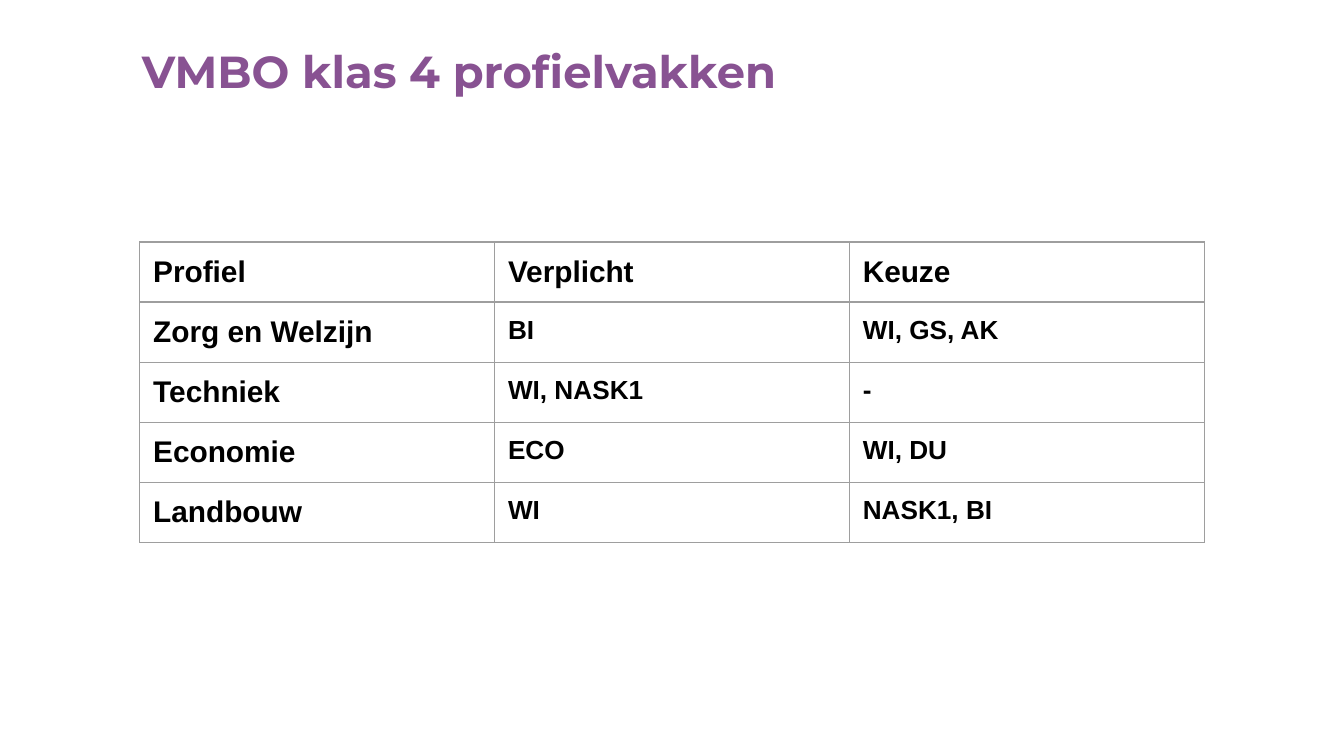
from lxml import etree
from pptx import Presentation
from pptx.dml.color import RGBColor
from pptx.enum.text import MSO_ANCHOR, PP_ALIGN
from pptx.oxml.ns import qn
from pptx.util import Pt

PX = 4572  # 200 px to the inch
INSET = 20 * PX
COLUMN_WIDTH, ROW_HEIGHT = 528, 84
ROWS = [
    ("Profiel", "Verplicht", "Keuze"),
    ("Zorg en Welzijn", "BI", "WI, GS, AK"),
    ("Techniek", "WI, NASK1", "-"),
    ("Economie", "ECO", "WI, DU"),
    ("Landbouw", "WI", "NASK1, BI"),
]


def set_font(paragraph, name, size, color):
    paragraph.font.name = name
    paragraph.font.size = Pt(size)
    paragraph.font.bold = True
    paragraph.font.color.rgb = RGBColor.from_string(color)


def add_borders(cell, color, width):
    """Draw all four edges; call before the cell's fill is set."""
    properties = cell._tc.get_or_add_tcPr()
    for edge in ("a:lnL", "a:lnR", "a:lnT", "a:lnB"):
        line = etree.SubElement(properties, qn(edge), w=str(Pt(width)))
        fill = etree.SubElement(line, qn("a:solidFill"))
        etree.SubElement(fill, qn("a:srgbClr"), val=color)


presentation = Presentation()
presentation.slide_width = 2000 * PX
presentation.slide_height = 1125 * PX
slide = presentation.slides.add_slide(presentation.slide_layouts[5])

title = slide.shapes.title
title.left, title.top, title.width, title.height = 191 * PX, 13 * PX, 1644 * PX, 184 * PX
frame = title.text_frame
frame.text = "VMBO klas 4 profielvakken"
frame.word_wrap = True
frame.vertical_anchor = MSO_ANCHOR.MIDDLE
frame.margin_left = frame.margin_right = INSET
frame.margin_top = frame.margin_bottom = INSET
frame.paragraphs[0].alignment = PP_ALIGN.LEFT
set_font(frame.paragraphs[0], "Montserrat", 24, "885292")

column_count = len(ROWS[0])
table = slide.shapes.add_table(
    len(ROWS), column_count, 208 * PX, 360 * PX,
    column_count * COLUMN_WIDTH * PX, len(ROWS) * ROW_HEIGHT * PX,
).table
table.horz_banding = False
table.first_row = False

for row_index, row in enumerate(ROWS):
    for column_index, text in enumerate(row):
        cell = table.cell(row_index, column_index)
        cell.text = text
        cell.margin_left = cell.margin_right = INSET
        cell.margin_top = cell.margin_bottom = INSET
        add_borders(cell, "9E9E9E", 0.75)
        cell.fill.background()
        is_heading = row_index == 0 or column_index == 0
        set_font(cell.text_frame.paragraphs[0], "Arial", 16 if is_heading else 14, "000000")

presentation.save("out.pptx")
